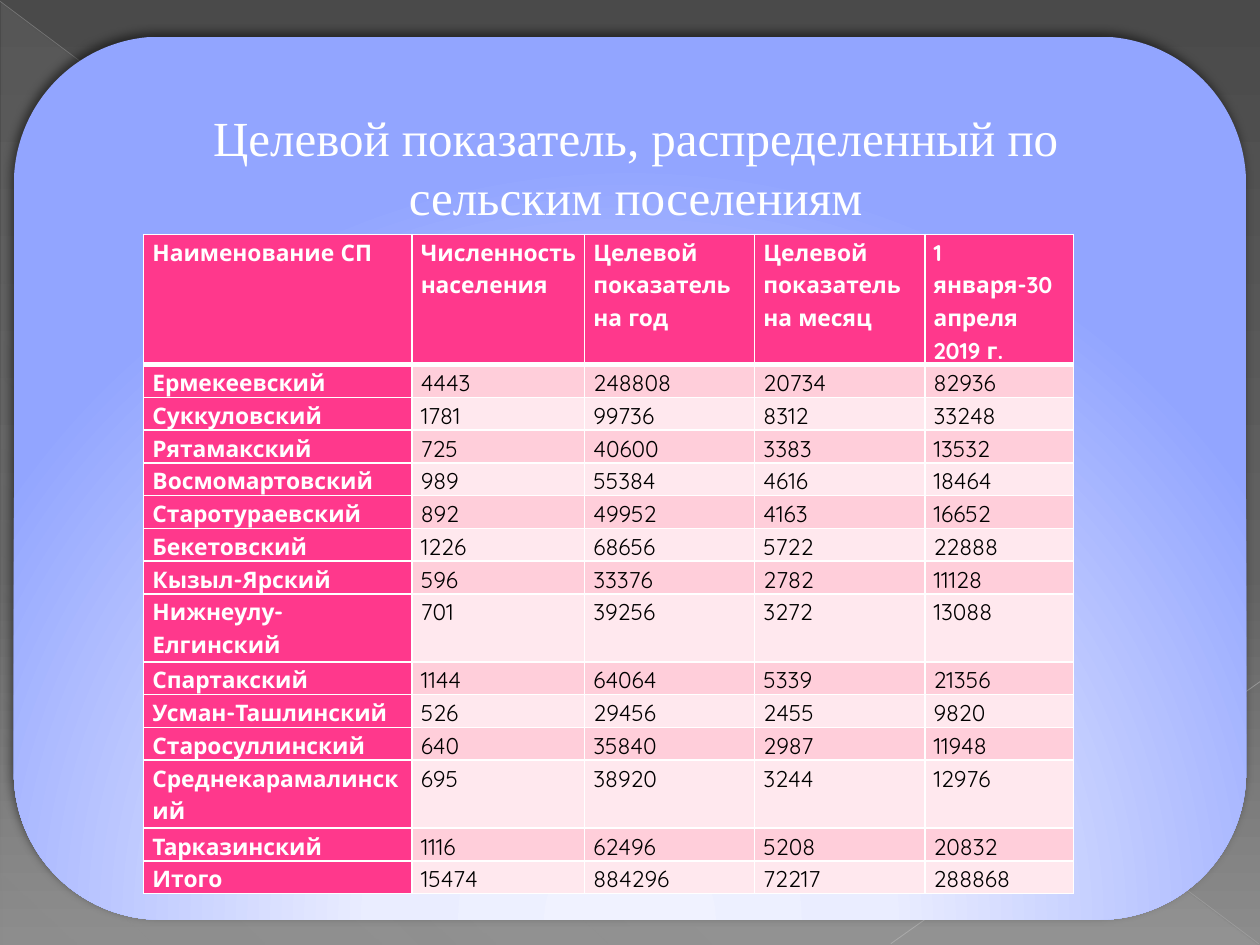
from dataclasses import dataclass

from lxml import etree
from pptx import Presentation, util as u
from pptx.dml.color import RGBColor
from pptx.enum import shapes, text
from pptx.oxml import ns


@dataclass(frozen=True)
class Theme:
    white: str = "FFFFFF"
    black: str = "000000"
    accent: str = "FF388C"
    bands: tuple = ("FFCEDA", "FFE8EE")
    background: tuple = ((0, "4A4A4A"), (60, "626262"), (100, "8C8C8C"))
    sheen: tuple = ((0, "D2D2D2", 10), (70, "D2D2D2", 8), (100, "D2D2D2", 1))
    panel: tuple = ((0, "F0F2FF"), (34, "EAEDFF"), (100, "92A5FF"))
    title_font: str = "Times New Roman"
    table_font: str = "Quicksand"
    title_size: int = 28
    table_size: int = 13


HEADERS = ["Наименование СП", "Численность населения", "Целевой показатель на год",
           "Целевой показатель на месяц", "1 января-30 апреля 2019 г."]
SETTLEMENTS = [
    ("Ермекеевский", 4443, 248808, 20734, 82936),
    ("Суккуловский", 1781, 99736, 8312, 33248),
    ("Рятамакский", 725, 40600, 3383, 13532),
    ("Восмомартовский", 989, 55384, 4616, 18464),
    ("Старотураевский", 892, 49952, 4163, 16652),
    ("Бекетовский", 1226, 68656, 5722, 22888),
    ("Кызыл-Ярский", 596, 33376, 2782, 11128),
    ("Нижнеулу-Елгинский", 701, 39256, 3272, 13088),
    ("Спартакский", 1144, 64064, 5339, 21356),
    ("Усман-Ташлинский", 526, 29456, 2455, 9820),
    ("Старосуллинский", 640, 35840, 2987, 11948),
    ("Среднекарамалинский", 695, 38920, 3244, 12976),
    ("Тарказинский", 1116, 62496, 5208, 20832),
    ("Итого", 15474, 884296, 72217, 288868),
]
COLUMN_WIDTHS = [2.13, 1.37, 1.35, 1.35, 1.18]
HEADER_HEIGHT, ROW_HEIGHT, TALL_ROW_HEIGHT = 0.83, 0.26, 0.54
LONG_NAME = 17  # names of this length or more take two lines


def add(parent, tag, **attrs):
    """Append a DrawingML element."""
    values = {key: str(value) for key, value in attrs.items()}
    return etree.SubElement(parent, ns.qn("a:" + tag), values)


def add_color(parent, color, alpha=100):
    clr = add(parent, "srgbClr", val=color)
    if alpha < 100:
        add(clr, "alpha", val=alpha * 1000)


def inches(*values):
    return [u.Inches(value) for value in values]


class SlideBuilder:
    def __init__(self, prs, theme):
        self.theme = theme
        self.s = prs.slides.add_slide(prs.slide_layouts[6])

    def gradient(self, owner, stops, angle=None, center=None):
        """Fill the slide background or a shape with a gradient."""
        fill = owner.background.fill if owner is self.s else owner.fill
        fill.gradient()
        grad = owner.element.find(".//" + ns.qn("a:gradFill"))
        for child in list(grad):
            grad.remove(child)
        stop_list = add(grad, "gsLst")
        for position, *color in stops:
            add_color(add(stop_list, "gs", pos=position * 1000), *color)
        if center:
            sides = {side: pct * 1000 for side, pct in zip("ltrb", center)}
            add(add(grad, "path", path="circle"), "fillToRect", **sides)
        else:
            add(grad, "lin", ang=angle * 60000, scaled=0)

    def shape(self, kind, box, stops, **gradient):
        sp = self.s.shapes.add_shape(kind, *inches(*box))
        sp.shadow.inherit = False
        sp.line.fill.background()
        self.gradient(sp, stops, **gradient)
        return sp

    def shadow(self, sp, alpha, blur, distance, direction):
        effects = sp.element.spPr.find(ns.qn("a:effectLst"))
        outer = add(effects, "outerShdw", blurRad=u.Pt(blur), dist=u.Pt(distance),
                    dir=direction * 60000, rotWithShape=0)
        add_color(outer, self.theme.black, alpha)

    def line(self, ends, color, width, alpha):
        cn = self.s.shapes.add_connector(shapes.MSO_CONNECTOR.STRAIGHT, *inches(*ends))
        cn.line.width = u.Pt(width)
        cn.line.color.rgb = RGBColor.from_string(color)
        clr = cn.element.find(".//" + ns.qn("a:srgbClr"))
        add(clr, "alpha", val=alpha * 1000)
        add(cn.element.spPr, "effectLst")

    def font(self, p, name, size, color, bold=False):
        p.font.name = name
        p.font.size = u.Pt(size)
        p.font.bold = bold
        p.font.color.rgb = RGBColor.from_string(color)

    def title(self, box, content):
        tf = self.s.shapes.add_textbox(*inches(*box)).text_frame
        tf.word_wrap = True
        tf.vertical_anchor = text.MSO_ANCHOR.MIDDLE
        tf.margin_bottom = u.Inches(0.34)
        p = tf.paragraphs[0]
        p.text = content
        p.alignment = text.PP_ALIGN.CENTER
        self.font(p, self.theme.title_font, self.theme.title_size, self.theme.white)

    def cell(self, cell, content, fill, color, bold, top, bottom):
        cell.margin_left = cell.margin_right = u.Inches(0.07)
        cell.margin_top = cell.margin_bottom = 0
        # Borders come before the fill in the cell properties
        tc_pr = cell._tc.get_or_add_tcPr()
        for side, width in zip("LRTB", (1, 1, top, bottom)):
            ln = add(tc_pr, "ln" + side, w=u.Pt(width))
            add_color(add(ln, "solidFill"), self.theme.white)
        cell.fill.solid()
        cell.fill.fore_color.rgb = RGBColor.from_string(fill)
        p = cell.text_frame.paragraphs[0]
        p.text = str(content)
        p.alignment = text.PP_ALIGN.JUSTIFY
        p.line_spacing = 1.15
        self.font(p, self.theme.table_font, self.theme.table_size, color, bold)

    def table(self, left, top, widths, heights, rows):
        frame = self.s.shapes.add_table(
            len(rows), len(widths), *inches(left, top, sum(widths), sum(heights)))
        table = frame.table
        for column, width in zip(table.columns, widths):
            column.width = u.Inches(width)
        for i, (row, height) in enumerate(zip(rows, heights)):
            table.rows[i].height = u.Inches(height)
            for j, content in enumerate(row):
                heading = i == 0 or j == 0
                self.cell(table.cell(i, j), content,
                          fill=self.theme.accent if heading else self.theme.bands[(i - 1) % 2],
                          color=self.theme.white if heading else self.theme.black,
                          bold=heading, top=3 if i == 1 else 1, bottom=3 if i == 0 else 1)


def main():
    prs = Presentation()
    prs.slide_width, prs.slide_height = inches(10, 7.5)
    theme = Theme()
    slide = SlideBuilder(prs, theme)

    # Backdrop
    slide.gradient(slide.s, theme.background, angle=90)
    slide.shape(shapes.MSO_SHAPE.RIGHT_TRIANGLE, (0.01, 0.02, 9.98, 7.48),
                theme.sheen, angle=133)
    slide.line((0, 0.01, 9.99, 7.49), "BFBFBF", 0.39, 35)
    slide.line((10, 5.41, 7.07, 7.49), "C6C6C6", 0.47, 45)

    # Rounded panel
    panel = slide.shape(shapes.MSO_SHAPE.ROUNDED_RECTANGLE, (0.11, 0.29, 9.78, 7.01),
                        theme.panel, center=(50, 155, 50, -55))
    slide.shadow(panel, alpha=50, blur=5, distance=2, direction=245)

    # Table of settlements
    heights = [HEADER_HEIGHT] + [
        TALL_ROW_HEIGHT if len(name) >= LONG_NAME else ROW_HEIGHT
        for name, *_ in SETTLEMENTS]
    slide.table(1.14, 1.86, COLUMN_WIDTHS, heights, [HEADERS, *SETTLEMENTS])

    # Title
    slide.title((0.91, 0.79, 8.27, 1.35),
                "Целевой показатель, распределенный по сельским поселениям")

    prs.save("out.pptx")


if __name__ == "__main__":
    main()
